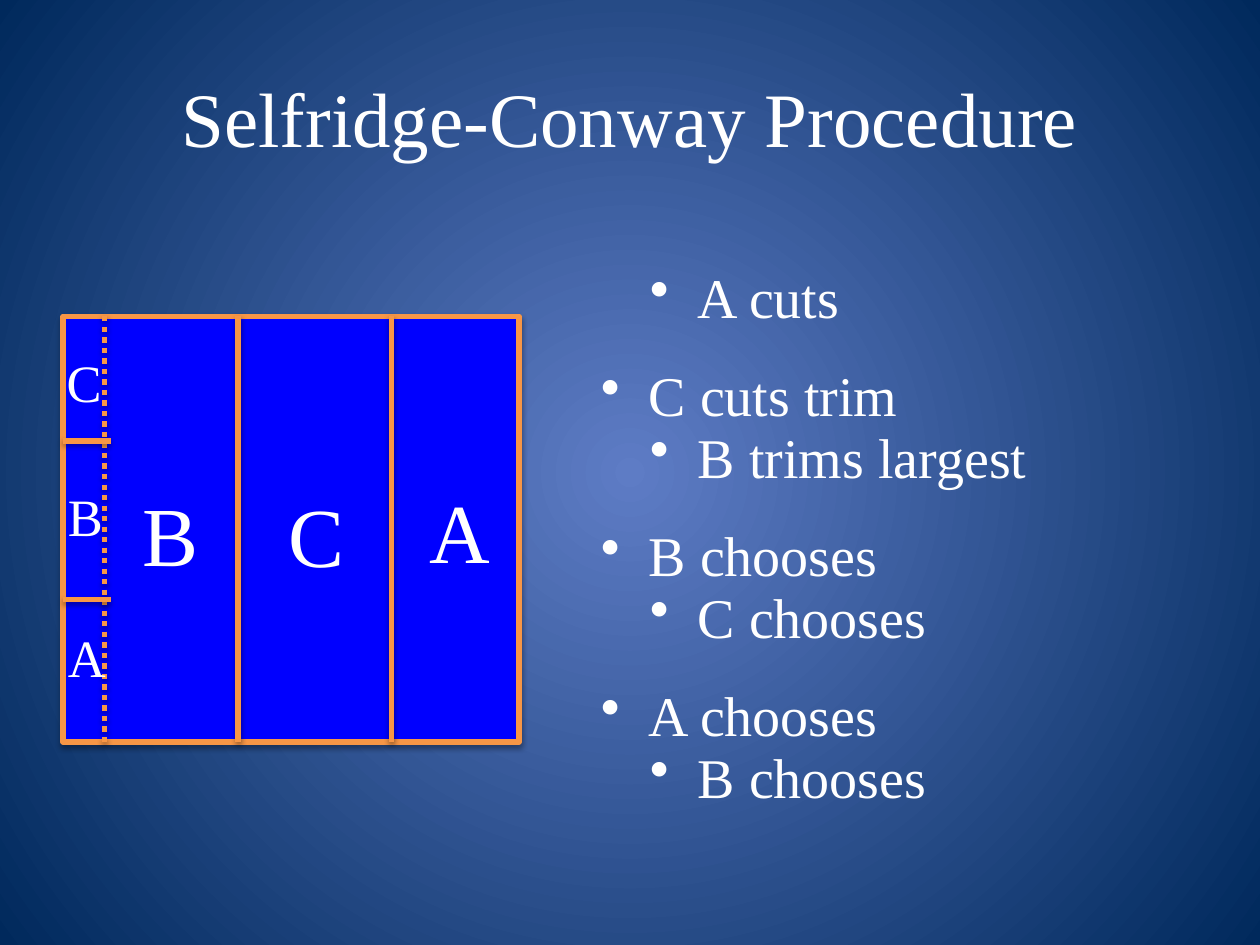
import pptx
import pptx.dml.color
import pptx.enum.dml
import pptx.enum.shapes
import pptx.enum.text
import pptx.oxml
import pptx.oxml.ns
import pptx.util
import lxml.etree

Inches, Pt = pptx.util.Inches, pptx.util.Pt
RGBColor = pptx.dml.color.RGBColor
WHITE = RGBColor(0xFF, 0xFF, 0xFF)
CAKE_BLUE = RGBColor(0x00, 0x00, 0xFF)
ORANGE = RGBColor(0xF7, 0x96, 0x46)
GLOW = RGBColor(0x5E, 0x7C, 0xC5)
NAVY = RGBColor(0x00, 0x29, 0x5C)
NS = pptx.oxml.ns.nsdecls("a")


def add_text(p, text, size):
    r = p.add_run()
    r.text = text
    r.font.name = "Times New Roman"
    r.font.size = Pt(size)
    r.font.color.rgb = WHITE


def outline(s, distance, alpha):
    """Orange outline with a soft shadow below."""
    s.line.color.rgb = ORANGE
    s.line.width = Pt(3)
    s._element.spPr.append(pptx.oxml.parse_xml(
        f'<a:effectLst {NS}><a:outerShdw blurRad="{Pt(3.1)}" dist="{Pt(distance)}" '
        f'dir="5400000" rotWithShape="0"><a:srgbClr val="000000">'
        f'<a:alpha val="{alpha * 1000}"/></a:srgbClr></a:outerShdw></a:effectLst>'))


prs = pptx.Presentation()
prs.slide_width, prs.slide_height = Inches(10), Inches(7.5)
slide = prs.slides.add_slide(prs.slide_layouts[5])

# Background: radial gradient from the centre
fill = slide.background.fill
fill.gradient()
for stop, color, position in zip(fill.gradient_stops, (GLOW, NAVY), (0, 1)):
    stop.color.rgb = color
    stop.position = position
lin = slide._element.find(".//" + pptx.oxml.ns.qn("a:lin"))
lin.getparent().replace(lin, pptx.oxml.parse_xml(
    f'<a:path {NS} path="circle">'
    '<a:fillToRect l="50000" t="50000" r="50000" b="50000"/></a:path>'))

# Title
title = slide.shapes.title
title.left, title.top = Inches(0.5), Inches(0.3)
title.width, title.height = Inches(9), Inches(1.25)
title.text_frame.vertical_anchor = pptx.enum.text.MSO_ANCHOR.MIDDLE
p = title.text_frame.paragraphs[0]
p.alignment = pptx.enum.text.PP_ALIGN.CENTER
add_text(p, "Selfridge-Conway Procedure", 44)

# Two interleaved bullet lists
STEPS = [
    (5.06, 1.99, 4.44, ["A cuts", "B trims largest", "C chooses", "B chooses"]),
    (4.67, 2.77, 3.78, ["C cuts trim", "B chooses", "A chooses"]),
]
for left, top, width, steps in STEPS:
    s = slide.shapes.add_textbox(Inches(left), Inches(top), Inches(width), Inches(4.95))
    tf = s.text_frame
    tf.word_wrap = True
    tf.margin_top = Inches(0.09)
    for i, step in enumerate(steps):
        p = tf.add_paragraph() if i else tf.paragraphs[0]
        pPr = p._p.get_or_add_pPr()
        pPr.set("marL", str(Inches(0.38)))
        pPr.set("indent", str(-Inches(0.38)))
        bullet = lxml.etree.SubElement(pPr, pptx.oxml.ns.qn("a:buChar"))
        bullet.set("char", "•")
        if i:
            p.space_before = Pt(53)
        add_text(p, step, 32)

# Cake
LEFT, TOP, WIDTH, HEIGHT = 0.5, 2.51, 3.62, 3.38
BOTTOM = TOP + HEIGHT
cake = slide.shapes.add_shape(pptx.enum.shapes.MSO_SHAPE.RECTANGLE, Inches(LEFT),
                              Inches(TOP), Inches(WIDTH), Inches(HEIGHT))
cake.fill.solid()
cake.fill.fore_color.rgb = CAKE_BLUE
outline(cake, 1.8, 35)

# Cuts: two main cuts, the dotted trim line, then the cuts of the trim
TRIM = 0.83
cuts = [(x, TOP, x, BOTTOM) for x in (3.11, 1.89, TRIM)]
cuts += [(LEFT, y, 0.88, y) for y in (3.5, 4.76)]
for cut in cuts:
    s = slide.shapes.add_connector(pptx.enum.shapes.MSO_CONNECTOR.STRAIGHT,
                                   *[Inches(v) for v in cut])
    if cut[0] == TRIM:
        s.line.dash_style = pptx.enum.dml.MSO_LINE.ROUND_DOT
    outline(s, 1.6, 38)

# Owners of the pieces
OWNERS = [
    ("C", 2.19, 3.79, 0.92, 48), ("B", 1.03, 3.78, 1.17, 48), ("A", 3.31, 3.76, 1.17, 48),
    ("B", 0.44, 3.79, 1.17, 30), ("A", 0.44, 4.91, 1.17, 30), ("C", 0.43, 2.73, 1.17, 30),
]
for owner, left, top, width, size in OWNERS:
    s = slide.shapes.add_textbox(Inches(left), Inches(top), Inches(width), Inches(0.97))
    s.text_frame.word_wrap = True
    add_text(s.text_frame.paragraphs[0], owner, size)

prs.save("out.pptx")
